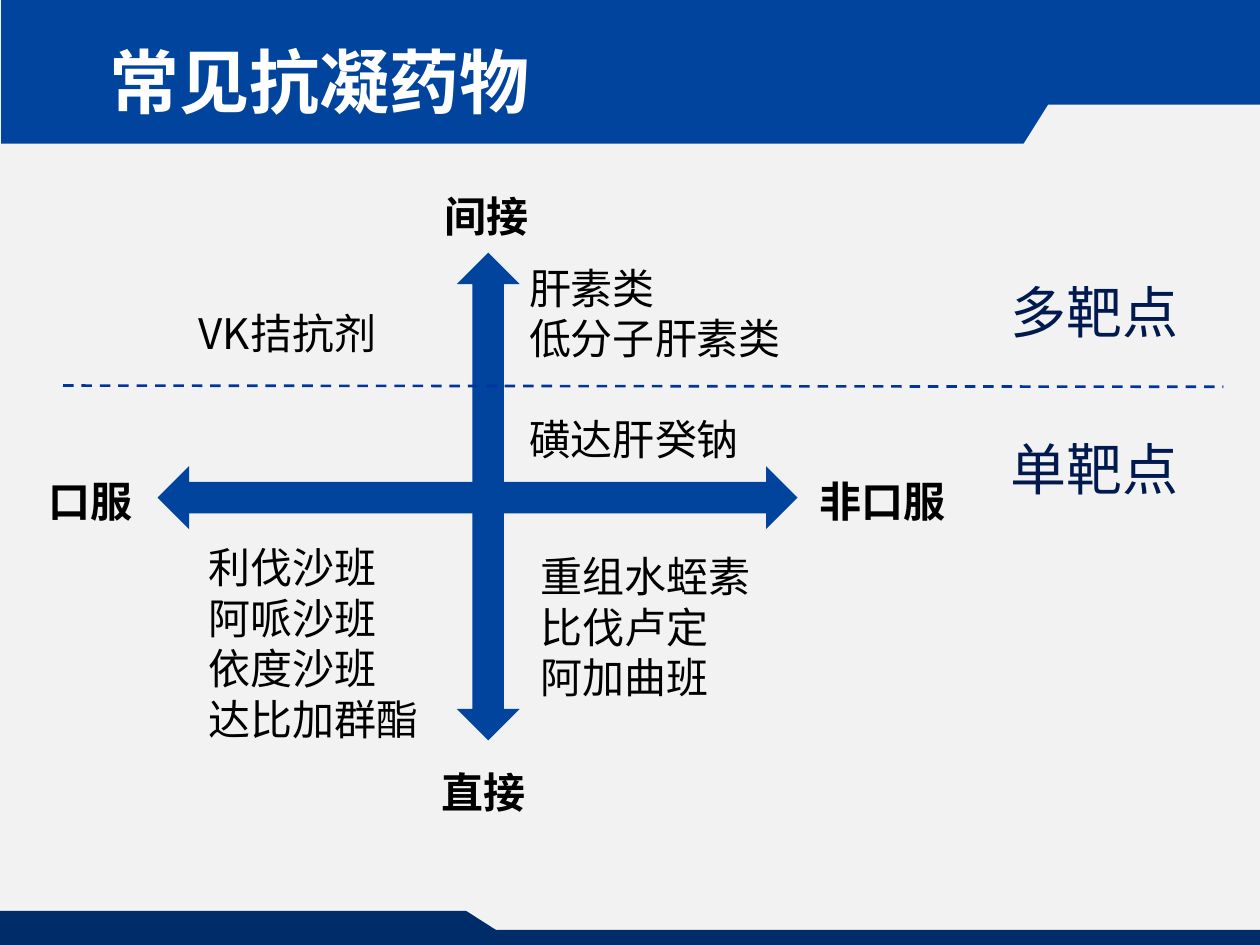
from dataclasses import dataclass

from lxml import etree
from pptx import Presentation
from pptx import util as u
from pptx.dml.color import RGBColor
from pptx.enum import dml, shapes, text
from pptx.oxml import ns


@dataclass(frozen=True)
class Theme:
    """Colours, font and type sizes of the slide."""
    font: str = "Noto Sans CJK SC"
    paper: str = "F2F2F2"
    blue: str = "00449E"
    navy: str = "002D6A"
    divider: str = "00349E"
    target: str = "001A4F"
    ink: str = "000000"
    white: str = "FFFFFF"
    body: int = 24
    label: int = 32
    title: int = 40
    leading: float = 1.2


THEME = Theme()


def paint(shape, color):
    """Give a shape a flat fill without outline or shadow."""
    shape.shadow.inherit = False
    shape.fill.solid()
    shape.fill.fore_color.rgb = RGBColor.from_string(color)
    shape.line.fill.background()


def add_preset(page, kind, place, color, rotation=0):
    """Add a filled preset shape."""
    shape = page.shapes.add_shape(kind, *map(u.Inches, place))
    shape.rotation = rotation
    paint(shape, color)


def add_outline(page, points, color):
    """Add a filled polygon from points in inches."""
    corners = [(u.Inches(x), u.Inches(y)) for x, y in points]
    builder = page.shapes.build_freeform(*corners[0])
    builder.add_line_segments(corners[1:], close=True)
    paint(builder.convert_to_shape(), color)


def add_divider(page, start, end):
    """Add the dashed line between the target groups."""
    line = page.shapes.add_connector(
        shapes.MSO_CONNECTOR.STRAIGHT, *map(u.Inches, start + end))
    line.line.color.rgb = RGBColor.from_string(THEME.divider)
    line.line.width = u.Pt(1.5)
    line.line.dash_style = dml.MSO_LINE.DASH
    etree.SubElement(line._element.spPr, ns.qn("a:effectLst"))


def add_text(page, lines, place, size=THEME.body, color=THEME.ink, bold=False,
             leading=THEME.leading, grow=True, gap_before=None):
    """Add a text box with one paragraph per line."""
    box = page.shapes.add_textbox(*map(u.Inches, place))
    frame = box.text_frame
    frame.word_wrap = True
    frame.margin_top = u.Inches(0.08)
    frame.margin_bottom = u.Inches(0.02)
    frame.auto_size = (text.MSO_AUTO_SIZE.SHAPE_TO_FIT_TEXT if grow
                       else text.MSO_AUTO_SIZE.NONE)
    for index, line in enumerate(lines):
        para = frame.add_paragraph() if index else frame.paragraphs[0]
        para.line_spacing = u.Pt(size * leading)
        if index == gap_before:
            para.space_before = u.Pt(size * leading)
        span = para.add_run()
        span.text = line
        span.font.name = THEME.font
        span.font.size = u.Pt(size)
        span.font.bold = bold
        span.font.color.rgb = RGBColor.from_string(color)
        etree.SubElement(span.font._element, ns.qn("a:ea"), typeface=THEME.font)


def add_frame(page):
    """Draw the header and footer bands."""
    rect = shapes.MSO_SHAPE.RECTANGLE
    add_outline(page, [(3.7, 7.23), (3.95, 7.39), (0, 7.39), (0, 7.23)], THEME.navy)
    add_preset(page, rect, (0, 7.38, 10, 0.12), THEME.navy)
    add_preset(page, rect, (0.01, 0, 9.99, 1.14), THEME.blue)
    add_outline(page, [(8.32, 0.83), (8.05, 1.26), (10, 1.26), (10, 0.83)],
                THEME.paper)


def add_axes(page):
    """Draw the two crossing arrows and the names of their ends."""
    arrow = shapes.MSO_SHAPE.LEFT_RIGHT_ARROW
    add_preset(page, arrow, (1.25, 3.7, 5.08, 0.5), THEME.blue)
    add_preset(page, arrow, (1.94, 3.69, 3.87, 0.5), THEME.blue, rotation=270)
    ends = [("直接", 3.41, 6, 0.96), ("间接", 3.43, 1.43, 0.96),
            ("口服", 0.29, 3.69, 0.96), ("非口服", 6.41, 3.69, 1.34)]
    for name, left, top, width in ends:
        add_text(page, [name], (left, top, width, 0.51), bold=True)


def add_drugs(page):
    """Write the drugs of each quadrant."""
    add_text(page, ["VK拮抗剂"], (1.48, 2.36, 1.92, 0.5))
    add_text(page, ["重组水蛭素", "比伐卢定", "阿加曲班"], (4.19, 4.29, 2.31, 1.31))
    add_text(page, ["肝素类", "低分子肝素类", "磺达肝癸钠"], (4.1, 2, 2.42, 1.72),
             gap_before=2)
    add_text(page, ["利伐沙班", "阿哌沙班", "依度沙班", "达比加群酯"],
             (1.56, 4.22, 2.31, 1.72))


def main():
    """Build and save the slide."""
    deck = Presentation()
    deck.slide_width, deck.slide_height = u.Inches(10), u.Inches(7.5)
    page = deck.slides.add_slide(deck.slide_layouts[6])
    page.background.fill.solid()
    page.background.fill.fore_color.rgb = RGBColor.from_string(THEME.paper)
    add_frame(page)
    add_axes(page)
    add_drugs(page)
    add_divider(page, (0.5, 3.06), (9.71, 3.07))
    for name, top in [("多靶点", 2.12), ("单靶点", 3.37)]:
        add_text(page, [name], (7.92, top, 1.62, 0.64), size=THEME.label,
                 color=THEME.target)
    add_text(page, ["常见抗凝药物"], (0.77, 0.29, 4.38, 1.25), size=THEME.title,
             color=THEME.white, bold=True, leading=THEME.leading * 0.9, grow=False)
    deck.save("out.pptx")


if __name__ == "__main__":
    main()
